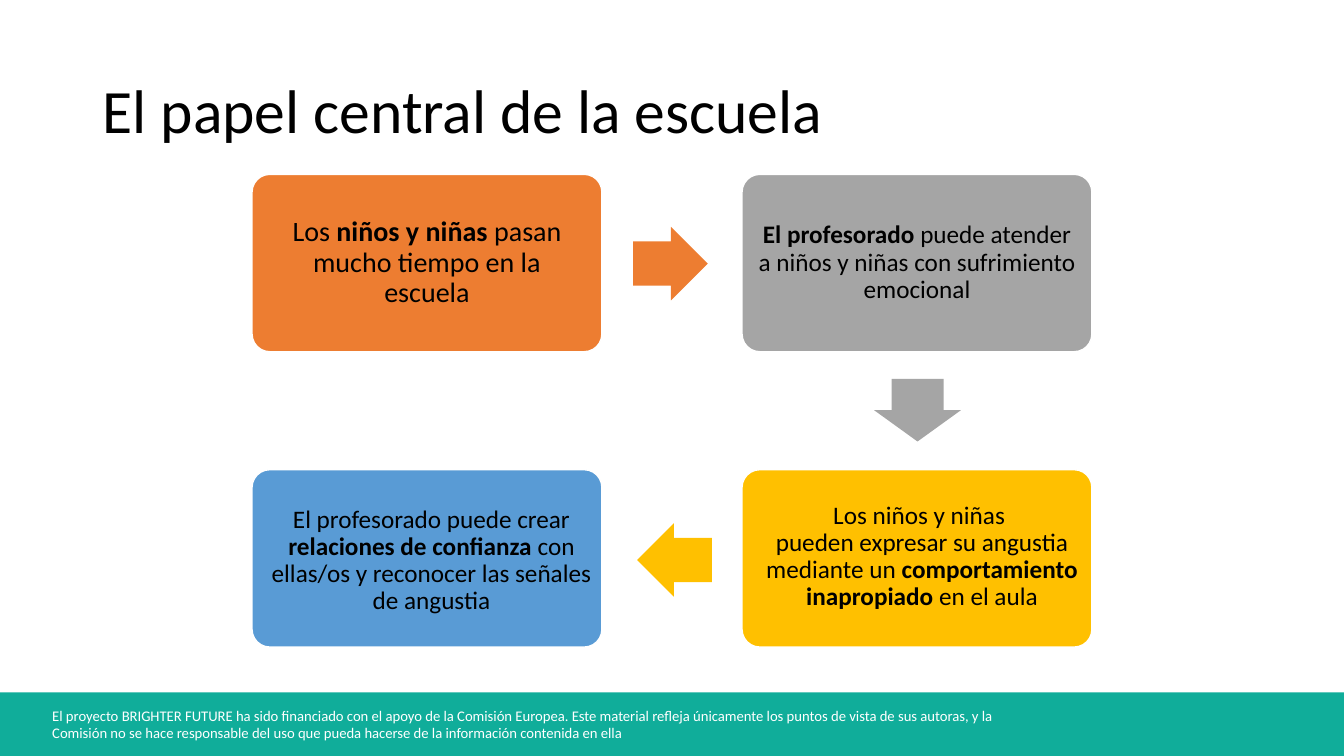
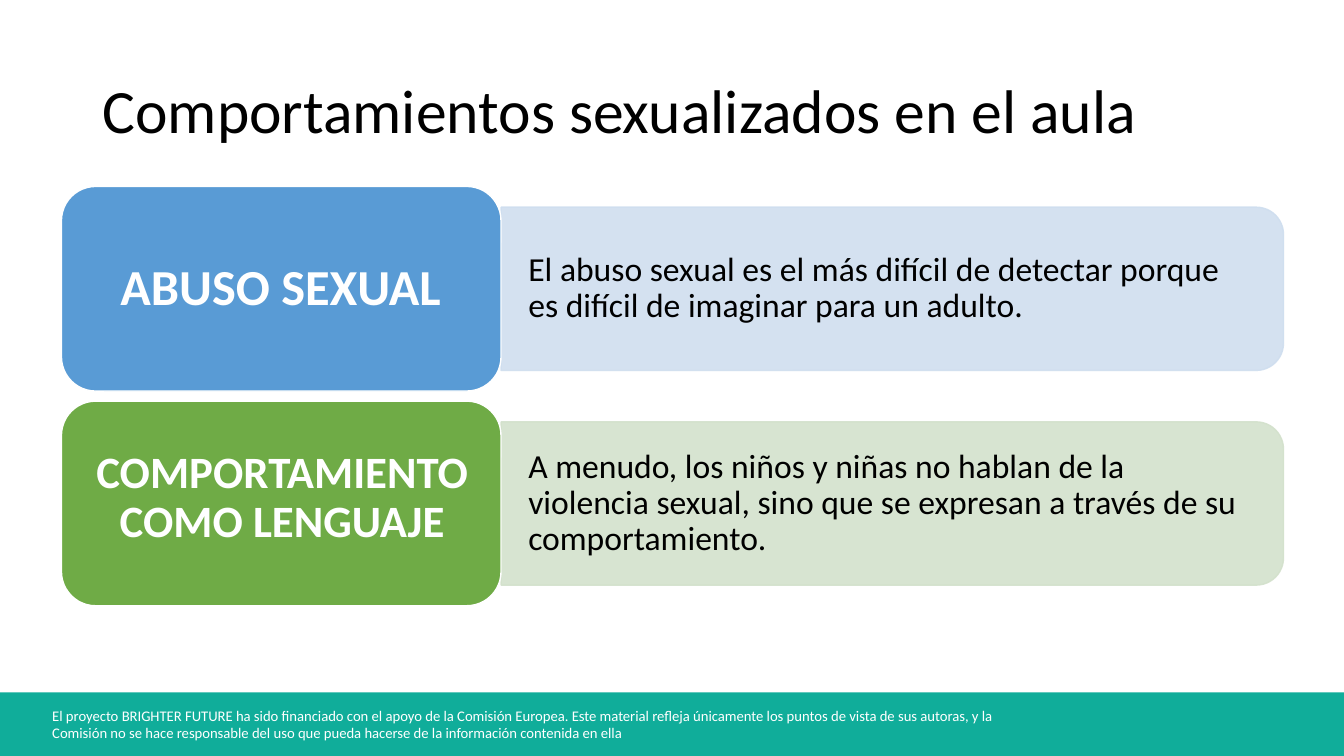
from lxml.etree import SubElement
from pptx import Presentation
from pptx.dml.color import RGBColor
from pptx.enum.shapes import MSO_SHAPE
from pptx.enum.text import MSO_ANCHOR, PP_ALIGN
from pptx.oxml.ns import qn
from pptx.util import Inches, Pt

FONT = "Calibri"
BLACK, WHITE, TEAL = "000000", "FFFFFF", "10AD9A"
ORANGE, GRAY, YELLOW = "ED7D31", "A5A5A5", "FFC000"
BLUE, GREEN = "599BD5", "6FAB46"
PALE_BLUE, PALE_GREEN = "CFDEEF", "D3E1CC"
SLIDE_W, SLIDE_H = 13.33, 7.5
BAND_H = 0.63
FOOTER = (
    "El proyecto BRIGHTER FUTURE ha sido financiado con el apoyo de la Comisión Europea. "
    "Este material refleja únicamente los puntos de vista de sus autoras, y la Comisión "
    "no se hace responsable del uso que pueda hacerse de la información contenida en ella"
)


def color(value):
    return RGBColor.from_string(value)


def add_block(s, kind, box, fill, adjustments=(), line=None, rotation=0):
    sp = s.shapes.add_shape(kind, *map(Inches, box))
    sp.shadow.inherit = False
    sp.fill.solid()
    sp.fill.fore_color.rgb = color(fill)
    if line:
        sp.line.color.rgb = color(line)
        sp.line.width = Pt(1)
    else:
        sp.line.fill.background()
    for i, value in enumerate(adjustments):
        sp.adjustments[i] = value
    sp.rotation = rotation
    return sp


def add_text(s, box, runs, size, ink=BLACK, insets=(0.1, 0.05),
             align=PP_ALIGN.LEFT, anchor=MSO_ANCHOR.MIDDLE, spacing=0.9):
    tf = s.shapes.add_textbox(*map(Inches, box)).text_frame
    tf.word_wrap = True
    tf.vertical_anchor = anchor
    tf.margin_left = tf.margin_right = Inches(insets[0])
    tf.margin_top = tf.margin_bottom = Inches(insets[1])
    p = tf.paragraphs[0]
    p.alignment = align
    p.line_spacing = spacing
    for text, bold in runs:
        if text == "\n":
            p.add_line_break()
            continue
        r = p.add_run()
        r.text = text
        r.font.name = FONT
        r.font.size = Pt(size)
        r.font.bold = bold
        r.font.color.rgb = color(ink)


def add_tile(s, box, fill, rounding, label_offset, runs, size, ink, insets):
    add_block(s, MSO_SHAPE.ROUNDED_RECTANGLE, box, fill, [rounding], WHITE)
    left, top, width, height = box
    dx, dy, dw, dh = label_offset
    add_text(s, (left + dx, top + dy, width + dw, height + dh), runs, size, ink,
             insets, PP_ALIGN.CENTER)


def add_frame(prs, title):
    s = prs.slides.add_slide(prs.slide_layouts[6])
    band_top = SLIDE_H - BAND_H
    add_block(s, MSO_SHAPE.RECTANGLE, (0, band_top, SLIDE_W, BAND_H), TEAL)
    add_text(s, (0.42, band_top + 0.09, 10, 0.45), [(FOOTER, False)], 10.5, WHITE,
             anchor=MSO_ANCHOR.TOP, spacing=1)
    add_text(s, (0.92, 0.4, 11.5, 1.45), [(title, False)], 44)
    return s


def add_cycle(s, box, steps, arrows):
    left, top, width, height = box
    tile_w, tile_h = 3.47, 1.76
    for col, row, fill, size, label_offset, runs in steps:
        tile = (left + col * (width - tile_w), top + row * (height - tile_h), tile_w, tile_h)
        add_tile(s, tile, fill, 0.1, label_offset, runs, size, BLACK, (0.1, 0.1))
    for dx, dy, w, h, fill, rotation in arrows:
        add_block(s, MSO_SHAPE.RIGHT_ARROW, (left + dx, top + dy, w, h), fill,
                  [0.6, 0.5], rotation=rotation)


def add_topic(s, box, fill, pale, heading, size, label_offset, body):
    left, top, width, height = box
    tile_w, bar_h = 4.36, 1.62
    bar_w = width - tile_w
    bar_left, middle = left + tile_w, top + height / 2
    bar = add_block(s, MSO_SHAPE.ROUND_2_SAME_RECTANGLE,
                    (bar_left + (bar_w - bar_h) / 2, middle - bar_w / 2, bar_h, bar_w),
                    pale, [0.167, 0], pale, 90)
    for clr in bar._element.spPr.iter(qn("a:srgbClr")):
        SubElement(clr, qn("a:alpha"), val="89000")
    add_text(s, (bar_left, middle - 0.73, bar_w - 0.1, 1.46), [(body, False)], 24,
             insets=(0.27, 0.14))
    add_tile(s, (left, top, tile_w, height), fill, 0.167, label_offset,
             [(heading, True)], size, WHITE, (0.2, 0.1))


def build_school_slide(prs):
    s = add_frame(prs, "El papel central de la escuela")
    inside = (0.06, 0.05, -0.12, -0.1)
    steps = [
        (0, 0, ORANGE, 20, inside,
         [("Los ", False), ("niños y niñas ", True),
          ("pasan mucho tiempo en la escuela", False)]),
        (1, 0, GRAY, 18, inside,
         [("El profesorado ", True),
          ("puede atender a niños y niñas con sufrimiento emocional", False)]),
        (1, 1, YELLOW, 18, (-0.08, 0, 0.26, -0.03),
         [("Los niños y niñas ", False), ("\n", False),
          ("pueden expresar su angustia mediante un ", False),
          ("comportamiento inapropiado ", True), ("en el aula", False)]),
        (0, 1, BLUE, 18, (-0.05, -0.21, 0.19, 0.47),
         [("El profesorado puede crear ", False), ("relaciones de confianza", True),
          (" con ellas/os y reconocer las señales de angustia", False)]),
    ]
    arrows = [
        (3.78, 0.52, 0.74, 0.73, ORANGE, 0),
        (6.29, 1.91, 0.62, 0.86, GRAY, 90),
        (3.82, 3.46, 0.74, 0.73, YELLOW, 180),
    ]
    add_cycle(s, (2.5, 1.73, 8.33, 4.69), steps, arrows)


def build_behaviour_slide(prs):
    s = add_frame(prs, "Comportamientos sexualizados en el aula")
    topics = [
        (BLUE, PALE_BLUE, "ABUSO SEXUAL", 36, (0.11, 0.1, -0.23, -0.2),
         "El abuso sexual es el más difícil de detectar porque es difícil de imaginar "
         "para un adulto."),
        (GREEN, PALE_GREEN, "COMPORTAMIENTO COMO LENGUAJE", 32, (-0.11, 0.05, 0.24, -0.2),
         "A menudo, los niños y niñas no hablan de la violencia sexual, sino que se "
         "expresan a través de su comportamiento."),
    ]
    for i, topic in enumerate(topics):
        add_topic(s, (0.61, 1.85 + i * 2.13, 12.12, 2.03), *topic)


def main():
    prs = Presentation()
    prs.slide_width, prs.slide_height = Inches(SLIDE_W), Inches(SLIDE_H)
    build_school_slide(prs)
    build_behaviour_slide(prs)
    prs.save("out.pptx")


if __name__ == "__main__":
    main()
